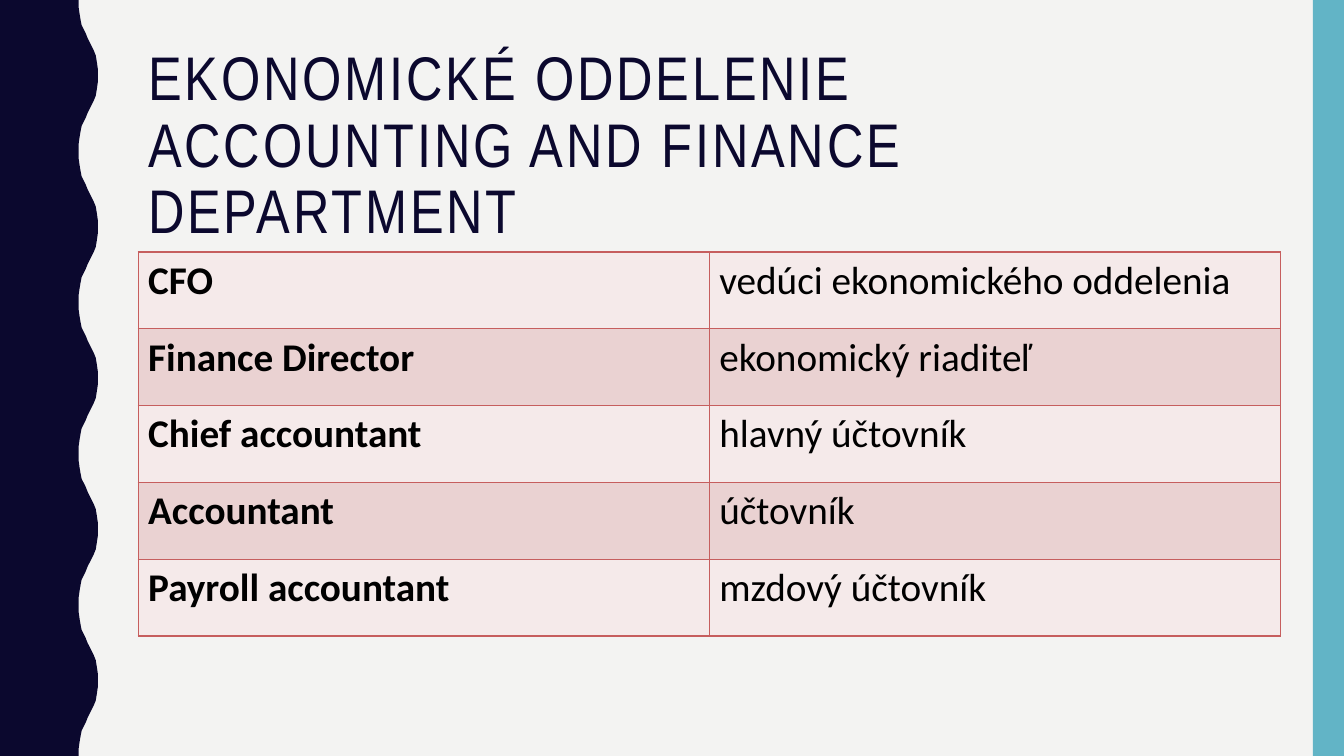
import pptx
import pptx.util
import pptx.dml.color
import pptx.enum.shapes
import pptx.enum.text
import pptx.oxml
import pptx.oxml.ns
from dataclasses import dataclass

Inches = pptx.util.Inches
Pt = pptx.util.Pt


@dataclass(frozen=True)
class Theme:
    paper: str = "F3F3F2"
    navy: str = "0B082E"
    teal: str = "62B4C6"
    line: str = "C65E5E"
    ink: str = "000000"
    bands: tuple = ("F5EAEA", "EAD2D2")
    head: str = "Arial Narrow"
    body: str = "Calibri"
    big: int = 44
    text: int = 28


THEME = Theme()
WIDE, HIGH = 13.33, 7.5
PERIOD = 1.5
CURVE = [(0.78, 0), (0.78, 0.07), (0.79, 0.14), (0.8, 0.2), (0.81, 0.25),
         (0.83, 0.29), (0.85, 0.33), (0.87, 0.38), (0.89, 0.42), (0.91, 0.46),
         (0.93, 0.5), (0.95, 0.55), (0.96, 0.61), (0.97, 0.68), (0.97, 0.75)]
TITLE = "EKONOMICKÉ ODDELENIE\vACCOUNTING AND FINANCE DEPARTMENT"
ROLES = [
    ("CFO", "vedúci ekonomického oddelenia"),
    ("Finance Director", "ekonomický riaditeľ"),
    ("Chief accountant", "hlavný účtovník"),
    ("Accountant", "účtovník"),
    ("Payroll accountant", "mzdový účtovník"),
]


def color(code):
    return pptx.dml.color.RGBColor.from_string(code)


def paint(fill, code):
    fill.solid()
    fill.fore_color.rgb = color(code)


def finish(shape, code):
    paint(shape.fill, code)
    shape.line.fill.background()
    shape.shadow.inherit = False


def add_wave(slide, left, top, height):
    half = CURVE + [(x, PERIOD - y) for x, y in CURVE[-2:0:-1]]
    edge = [(x, y + PERIOD * turn)
            for turn in range(round(height / PERIOD)) for x, y in half]
    edge += [(CURVE[0][0], height), (0, height)]
    form = slide.shapes.build_freeform(Inches(left), Inches(top))
    form.add_line_segments(
        [(Inches(left + x), Inches(top + y)) for x, y in edge], close=True)
    finish(form.convert_to_shape(), THEME.navy)


def add_band(slide, left, top, width, height):
    band = slide.shapes.add_shape(
        pptx.enum.shapes.MSO_SHAPE.RECTANGLE,
        Inches(left), Inches(top), Inches(width), Inches(height))
    finish(band, THEME.teal)


def add_title(slide, left, top, width, height):
    title = slide.shapes.title
    title.left, title.top = Inches(left), Inches(top)
    title.width, title.height = Inches(width), Inches(height)
    frame = title.text_frame
    frame.word_wrap = True
    frame.auto_size = pptx.enum.text.MSO_AUTO_SIZE.NONE
    frame.vertical_anchor = pptx.enum.text.MSO_ANCHOR.TOP
    para = frame.paragraphs[0]
    para.text = TITLE
    para.alignment = pptx.enum.text.PP_ALIGN.LEFT
    para.line_spacing = 0.9
    para.font.name = THEME.head
    para.font.size = Pt(THEME.big)
    para.font.color.rgb = color(THEME.navy)
    for run in para.runs:
        run.font._element.set("spc", "200")


def add_border(cell):
    props = cell._tc.get_or_add_tcPr()
    space = pptx.oxml.ns.nsdecls("a")
    for side in ("lnL", "lnR", "lnT", "lnB"):
        props.append(pptx.oxml.parse_xml(
            f'<a:{side} {space} w="{Pt(1)}"><a:solidFill>'
            f'<a:srgbClr val="{THEME.line}"/></a:solidFill></a:{side}>'))


def add_roles(slide, left, top, width, height):
    table = slide.shapes.add_table(
        len(ROLES), 2, Inches(left), Inches(top),
        Inches(width), Inches(height)).table
    table.first_row = False
    table.horz_banding = False
    for row, pair in enumerate(ROLES):
        for col, text in enumerate(pair):
            cell = table.cell(row, col)
            add_border(cell)
            paint(cell.fill, THEME.bands[row % 2])
            para = cell.text_frame.paragraphs[0]
            para.text = text
            para.font.name = THEME.body
            para.font.size = Pt(THEME.text)
            para.font.bold = col == 0
            para.font.color.rgb = color(THEME.ink)


def main():
    deck = pptx.Presentation()
    deck.slide_width, deck.slide_height = Inches(WIDE), Inches(HIGH)
    slide = deck.slides.add_slide(deck.slide_layouts[5])
    paint(slide.background.fill, THEME.paper)
    add_wave(slide, 0, 0, HIGH)
    add_band(slide, 13.02, 0, 0.31, HIGH)
    add_title(slide, 1.37, 0.42, 11.13, 1.63)
    add_roles(slide, 1.37, 2.5, 11.33, 3.81)
    deck.save("out.pptx")


if __name__ == "__main__":
    main()
